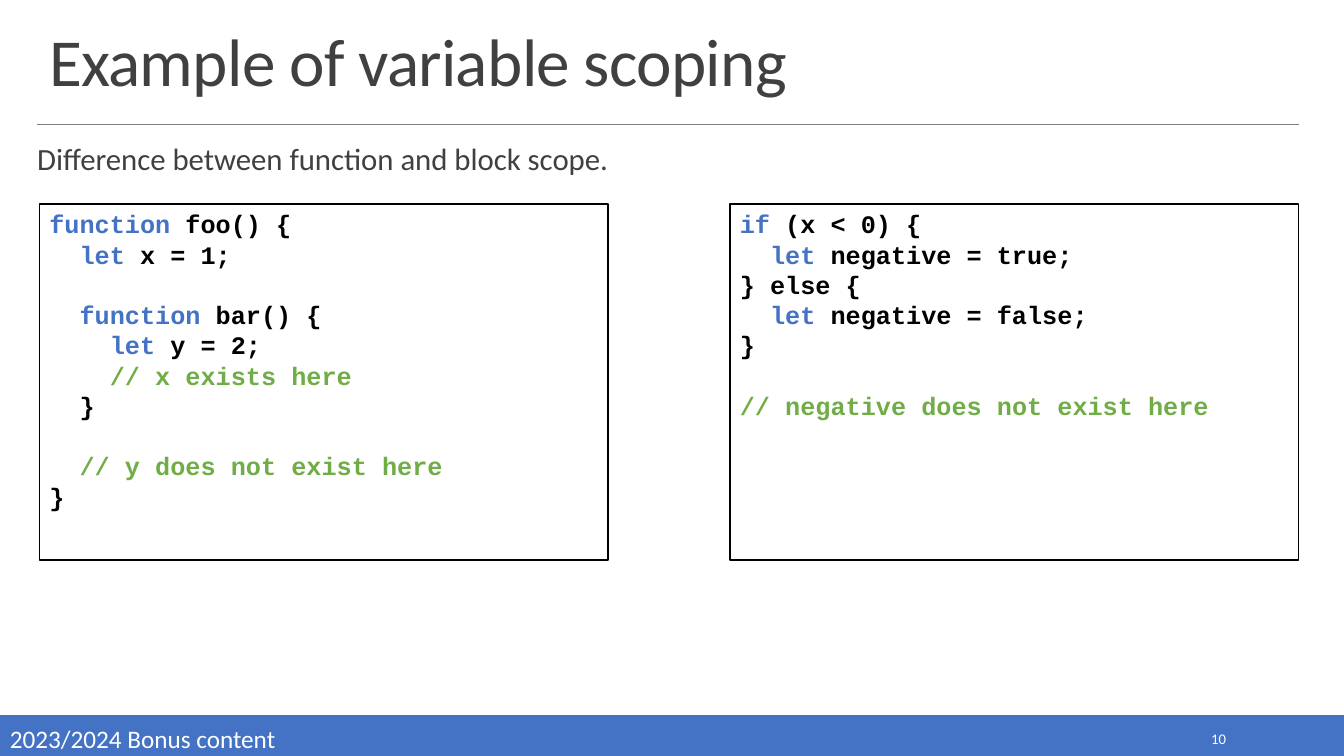
from pptx import Presentation
from pptx.dml.color import RGBColor
from pptx.enum.shapes import MSO_CONNECTOR, MSO_SHAPE
from pptx.enum.text import MSO_ANCHOR, PP_ALIGN
from pptx.oxml.ns import qn
from pptx.util import Pt
from lxml import etree

RECTANGLE, STRAIGHT = MSO_SHAPE.RECTANGLE, MSO_CONNECTOR.STRAIGHT
LEFT, RIGHT = PP_ALIGN.LEFT, PP_ALIGN.RIGHT
TOP, MIDDLE, BOTTOM = MSO_ANCHOR.TOP, MSO_ANCHOR.MIDDLE, MSO_ANCHOR.BOTTOM

BLUE = RGBColor(0x44, 0x72, 0xC4)
GREEN = RGBColor(0x70, 0xAD, 0x47)
DARK = RGBColor(0x40, 0x40, 0x40)
GRAY = RGBColor(0x80, 0x80, 0x80)
BLACK = RGBColor(0, 0, 0)
WHITE = RGBColor(0xFF, 0xFF, 0xFF)

KEYWORDS = ("function", "let", "if")
CODE_SIZE = 18
CODE_CHAR = 0.6 * CODE_SIZE
CODE_LINE = 1.2 * CODE_SIZE

FUNCTION_SCOPE = """function foo() {
  let x = 1;

  function bar() {
    let y = 2;
    // x exists here
  }

  // y does not exist here
}"""
BLOCK_SCOPE = """if (x < 0) {
  let negative = true;
} else {
  let negative = false;
}

// negative does not exist here"""


def add_span(para, text, size=18, font="Calibri", color=DARK, bold=False, spacing=0):
    span = para.add_run()
    span.text = text
    span.font.size = Pt(size)
    span.font.name = font
    span.font.bold = bold
    span.font.color.rgb = color
    if spacing:
        span.font._element.set("spc", str(round(spacing * 100)))
    return span


def set_indent(para, points):
    properties = para._p.get_or_add_pPr()
    properties.set("marL", str(Pt(points)))
    properties.set("indent", "0")
    return properties


class SlideBuilder:
    def __init__(self, deck):
        self.page = deck.slides.add_slide(deck.slide_layouts[1])
        self.shapes = self.page.shapes

    def place(self, box, left, top, width, height):
        box.left, box.top = Pt(left), Pt(top)
        box.width, box.height = Pt(width), Pt(height)

    def frame(self, box, anchor=TOP, align=LEFT):
        frame = box.text_frame
        frame.word_wrap = True
        frame.vertical_anchor = anchor
        frame.paragraphs[0].alignment = align
        return frame

    def title(self, text, *place):
        box = self.shapes.title
        self.place(box, *place)
        para = self.frame(box, BOTTOM).paragraphs[0]
        para.line_spacing = 0.85
        add_span(para, text, size=48, spacing=-0.5)

    def body(self, text, *place):
        box = self.page.placeholders[1]
        self.place(box, *place)
        frame = self.frame(box)
        frame.margin_left = frame.margin_right = 0
        frame.margin_top = frame.margin_bottom = Pt(3)
        para = frame.paragraphs[0]
        para.line_spacing = 0.9
        para.space_before, para.space_after = Pt(12), Pt(2)
        etree.SubElement(set_indent(para, 0), qn("a:buNone"))
        add_span(para, text, size=22)

    def rectangle(self, *place, line, fill=None):
        box = self.shapes.add_shape(RECTANGLE, *map(Pt, place))
        box.shadow.inherit = False
        if fill is None:
            box.fill.background()
        else:
            box.fill.solid()
            box.fill.fore_color.rgb = fill
        box.line.color.rgb = line
        box.line.width = Pt(1.25)
        return box

    def rule(self, left, top, right):
        line = self.shapes.add_connector(STRAIGHT, Pt(left), Pt(top), Pt(right), Pt(top))
        line.line.color.rgb = GRAY
        line.line.width = Pt(0.5)
        etree.SubElement(line._element.spPr, qn("a:effectLst"))

    def label(self, text, *place, size, anchor=TOP, align=LEFT):
        box = self.shapes.add_textbox(*map(Pt, place))
        para = self.frame(box, anchor, align).paragraphs[0]
        add_span(para, text, size=size, color=WHITE)

    def code(self, source, *place):
        frame = self.frame(self.rectangle(*place, line=BLACK))
        para, gap = frame.paragraphs[0], 0
        for number, line in enumerate(source.split("\n")):
            text = line.lstrip()
            if not text:
                gap += CODE_LINE
                continue
            if number:
                para = frame.add_paragraph()
            para.alignment = LEFT
            para.space_before, gap = Pt(gap), 0
            set_indent(para, (len(line) - len(text)) * CODE_CHAR)
            self.code_line(para, text)

    def code_line(self, para, text):
        word, space, rest = text.partition(" ")
        if word == "//":
            pieces = [(text, GREEN)]
        elif word in KEYWORDS:
            pieces = [(word, BLUE), (space + rest, BLACK)]
        else:
            pieces = [(text, BLACK)]
        for piece, color in pieces:
            add_span(para, piece, size=CODE_SIZE, font="Courier New", color=color, bold=True)


def main():
    deck = Presentation()
    deck.slide_width, deck.slide_height = Pt(960), Pt(540)
    slide = SlideBuilder(deck)

    # Heading
    slide.title("Example of variable scoping", 28, 14.4, 901.4, 60.5)
    slide.rule(26.6, 88.6, 928)
    slide.body("Difference between function and block scope.", 26.6, 100, 901.4, 28.8)

    # Code panels
    for left, source in ((28.2, FUNCTION_SCOPE), (521.4, BLOCK_SCOPE)):
        slide.code(source, left, 145.5, 406.2, 254.7)

    # Footer
    slide.rectangle(0, 511.2, 960, 28.8, line=BLUE, fill=BLUE)
    slide.label("10", 779.8, 517.7, 103, 20.2, size=10.5, anchor=MIDDLE, align=RIGHT)
    slide.label("2023/2024 Bonus content", 0, 513.4, 960, 29, size=18)

    deck.save("out.pptx")


if __name__ == "__main__":
    main()
